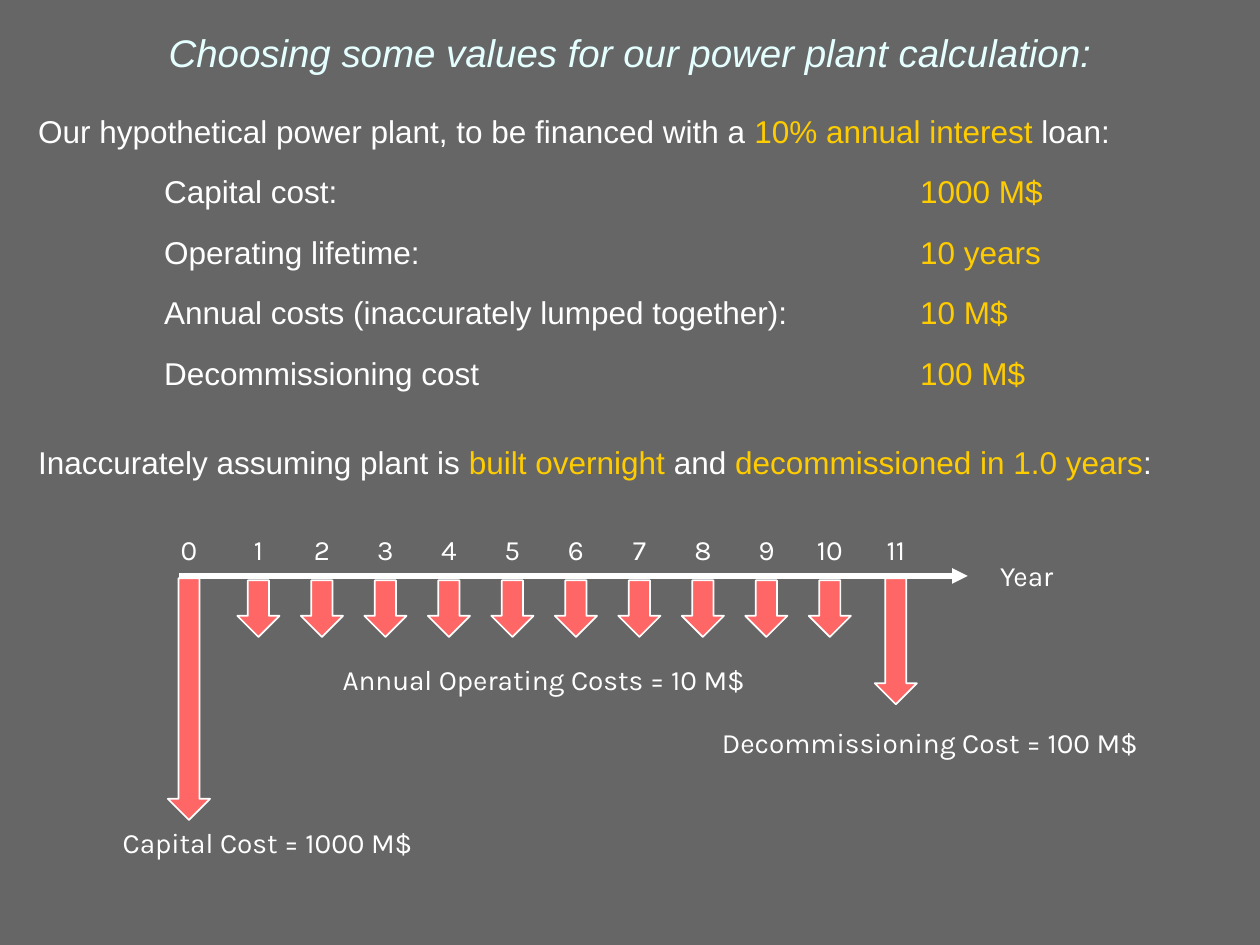
from dataclasses import dataclass
from typing import Any

from lxml import etree
from pptx import Presentation, util as u
from pptx.dml import color
from pptx.enum import shapes, text
from pptx.oxml import ns


@dataclass(frozen=True)
class Theme:
    background: str = "666666"
    title: str = "E5FFFF"
    body: str = "FFFFFF"
    highlight: str = "FFCC00"
    cost: str = "FF6666"
    body_font: str = "Arial"
    chart_font: str = "Karla"
    title_size: int = 22
    body_size: int = 18
    chart_size: int = 16


@dataclass(frozen=True)
class Box:
    left: float
    top: float
    width: float
    height: float

    def lengths(self) -> tuple[u.Cm, ...]:
        return tuple(u.Cm(value) for value in (self.left, self.top, self.width, self.height))


@dataclass(frozen=True)
class Run:
    text: str
    color: str


@dataclass(frozen=True)
class Line:
    runs: tuple[Run, ...]
    space_before: float = 0


@dataclass(frozen=True)
class Label:
    text: str
    box: Box
    align: Any = text.PP_ALIGN.CENTER


@dataclass(frozen=True)
class Payment:
    year: int
    center: float
    top: float
    height: float


THEME = Theme()
ARROW_WIDTH = 0.85
YEAR_TOP = 10.61
YEAR_WIDTH = 1.5
LABEL_HEIGHT = 0.92
AXIS_TOP = 11.61
TAB_STOPS = (2.54, 17.78)

PARAMETERS = (
    ("Capital cost:", "1000 M$"),
    ("Operating lifetime:", "10 years"),
    ("Annual costs (inaccurately lumped together):", "10 M$"),
    ("Decommissioning cost", "100 M$"),
)
PAYMENTS = (
    Payment(0, 3.81, 11.66, 4.87),
    *(Payment(year, 5.21 + 1.28 * (year - 1), 11.7, 1.14) for year in range(1, 11)),
    Payment(11, 18.06, 11.66, 2.54),
)
LABELS = (
    Label("Decommissioning Cost = 100 M$", Box(13.77, 14.5, 9.96, LABEL_HEIGHT)),
    Label("Capital Cost = 1000 M$", Box(1.9, 16.51, 6.99, LABEL_HEIGHT)),
    Label("Annual Operating Costs = 10 M$", Box(3.94, 13.23, 14.05, LABEL_HEIGHT)),
    Label("Year", Box(20.03, 11.13, 2.11, LABEL_HEIGHT), text.PP_ALIGN.LEFT),
)


def apply_format(target: Any, values: dict[str, Any]) -> None:
    for name, value in values.items():
        setattr(target, name, value)


def rgb(value: str) -> color.RGBColor:
    return color.RGBColor.from_string(value)


def add_tabs(paragraph: Any, stops: tuple[float, ...]) -> None:
    tab_list = etree.SubElement(paragraph._p.get_or_add_pPr(), ns.qn("a:tabLst"))
    for stop in stops:
        etree.SubElement(tab_list, ns.qn("a:tab"), pos=str(u.Cm(stop)), algn="l")


def add_text(slide: Any, box: Box, lines: tuple[Line, ...], font: dict[str, Any],
             align: Any = text.PP_ALIGN.LEFT, anchor: Any = text.MSO_ANCHOR.TOP,
             tabs: tuple[float, ...] = ()) -> None:
    frame = slide.shapes.add_textbox(*box.lengths()).text_frame
    margins = {f"margin_{side}": u.Cm(0.13) for side in ("left", "top", "right", "bottom")}
    apply_format(frame, {"word_wrap": True, "vertical_anchor": anchor, **margins})
    for index, line in enumerate(lines):
        paragraph = frame.add_paragraph() if index else frame.paragraphs[0]
        if tabs:
            add_tabs(paragraph, tabs)
        apply_format(paragraph, {"alignment": align, "space_before": u.Pt(line.space_before)})
        for part in line.runs:
            run = paragraph.add_run()
            run.text = part.text
            apply_format(run.font, font)
            run.font.color.rgb = rgb(part.color)


def add_label(slide: Any, label: Label) -> None:
    font = {"name": THEME.chart_font, "size": u.Pt(THEME.chart_size)}
    add_text(slide, label.box, (Line((Run(label.text, THEME.body),)),), font, label.align)


def add_axis(slide: Any) -> None:
    axis = slide.shapes.add_connector(
        shapes.MSO_CONNECTOR.STRAIGHT,
        u.Cm(3.61), u.Cm(AXIS_TOP), u.Cm(19.51), u.Cm(AXIS_TOP),
    )
    axis.line.color.rgb = rgb(THEME.body)
    axis.line.width = u.Pt(3)
    etree.SubElement(axis.line._get_or_add_ln(), ns.qn("a:tailEnd"), type="triangle")
    etree.SubElement(axis._element.spPr, ns.qn("a:effectLst"))


def add_payment(slide: Any, payment: Payment) -> None:
    box = Box(payment.center - ARROW_WIDTH / 2, payment.top, ARROW_WIDTH, payment.height)
    arrow = slide.shapes.add_shape(shapes.MSO_SHAPE.DOWN_ARROW, *box.lengths())
    arrow.shadow.inherit = False
    arrow.fill.solid()
    arrow.fill.fore_color.rgb = rgb(THEME.cost)
    arrow.line.color.rgb = rgb(THEME.body)
    arrow.line.width = u.Pt(1)
    year_box = Box(payment.center - YEAR_WIDTH / 2, YEAR_TOP, YEAR_WIDTH, LABEL_HEIGHT)
    add_label(slide, Label(str(payment.year), year_box))


def body_lines() -> tuple[Line, ...]:
    plain, bright = THEME.body, THEME.highlight
    return (
        Line((
            Run("Our hypothetical power plant, to be financed with a ", plain),
            Run("10% annual interest ", bright),
            Run("loan:", plain),
        )),
        *(Line((Run(f"\t{name}\t", plain), Run(value, bright)), 13) for name, value in PARAMETERS),
        Line((
            Run("Inaccurately assuming plant is ", plain),
            Run("built overnight ", bright),
            Run("and ", plain),
            Run("decommissioned in 1.0 years", bright),
            Run(":", plain),
        ), 29.5),
    )


def main() -> None:
    presentation = Presentation()
    apply_format(presentation, {"slide_width": u.Cm(25.4), "slide_height": u.Cm(19.05)})
    slide = presentation.slides.add_slide(presentation.slide_layouts[6])
    slide.background.fill.solid()
    slide.background.fill.fore_color.rgb = rgb(THEME.background)

    title = Line((Run("Choosing some values for our power plant calculation:", THEME.title),))
    title_font = {"name": THEME.body_font, "size": u.Pt(THEME.title_size), "italic": True}
    add_text(slide, Box(0, 0.21, 25.4, 1.69), (title,), title_font,
             text.PP_ALIGN.CENTER, text.MSO_ANCHOR.MIDDLE)
    body_font = {"name": THEME.body_font, "size": u.Pt(THEME.body_size)}
    add_text(slide, Box(0.64, 2.12, 24.34, 7.21), body_lines(), body_font, tabs=TAB_STOPS)

    add_axis(slide)
    for payment in PAYMENTS:
        add_payment(slide, payment)
    for label in LABELS:
        add_label(slide, label)
    presentation.save("out.pptx")


if __name__ == "__main__":
    main()
